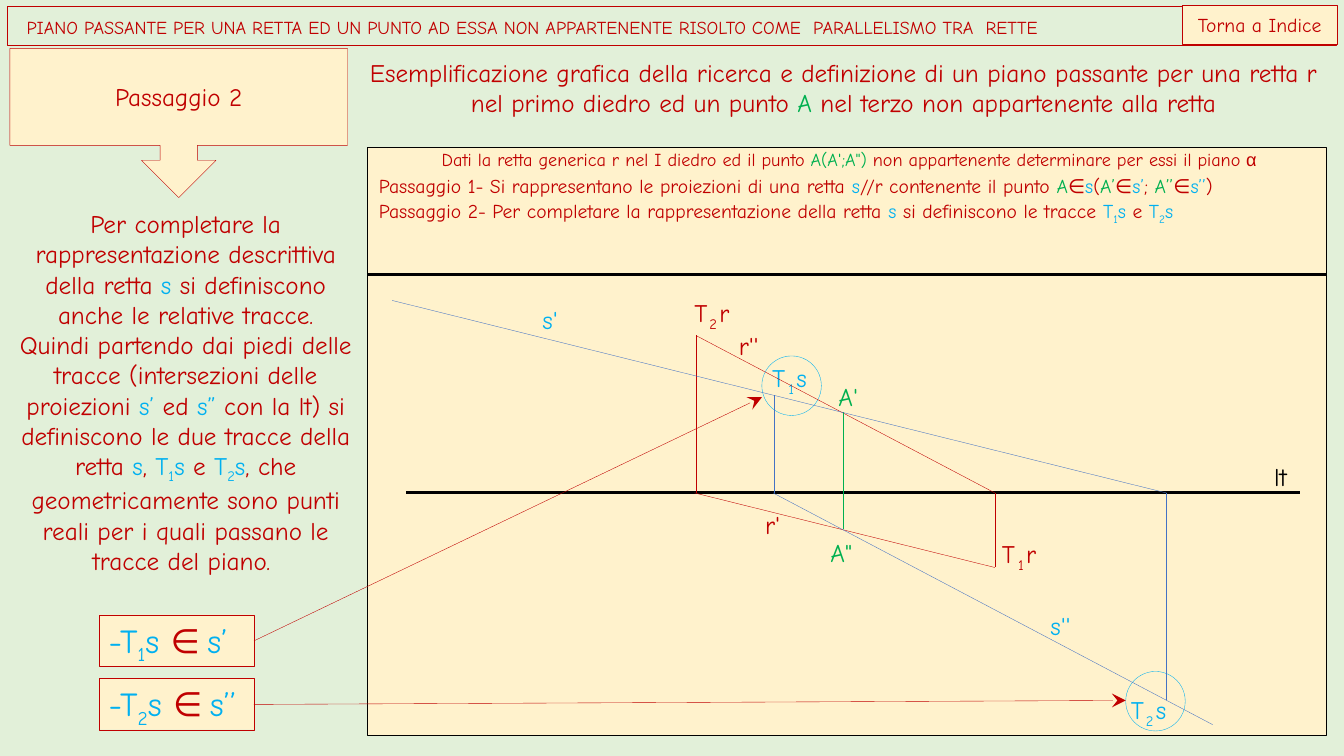
"""Build the slide on a plane through a line and a point outside it."""
from dataclasses import dataclass

from lxml import etree
from pptx import Presentation
from pptx import util as u
from pptx.dml.color import RGBColor
from pptx.enum import shapes, text
from pptx.oxml.ns import qn

HUES = {"red": "C00000", "green": "00B050", "sky": "00B0F0", "blue": "4472C4",
        "black": "000000", "cream": "FFF2CC", "mint": "E2F0D9"}
FONT = "Comic Neue"
STYLES = {"r": ("red", FONT), "g": ("green", FONT), "b": ("sky", FONT),
          "k": ("black", FONT), "c": ("red", "Calibri"), "a": ("red", "Arial")}
KIND = shapes.MSO_SHAPE
LEFT, MID = text.PP_ALIGN.LEFT, text.PP_ALIGN.CENTER
TOP, HALF = text.MSO_ANCHOR.TOP, text.MSO_ANCHOR.MIDDLE
GROUND = 12.42


@dataclass
class Box:
    """Hold a frame in centimetres."""
    x: float
    y: float
    w: float
    h: float

    def spans(self) -> list:
        """Return the frame as lengths."""
        return [u.Cm(v) for v in (self.x, self.y, self.w, self.h)]


@dataclass
class Line:
    """Hold a straight line with its colour and end."""
    x1: float
    y1: float
    x2: float
    y2: float
    hue: str
    width: float = 0.25
    arrow: bool = False


@dataclass
class Mark:
    """Hold a short label of the drawing."""
    x: float
    y: float
    w: float
    words: str
    h: float = 0.76


@dataclass
class Trace:
    """Hold a trace label made of letter, index and line name."""
    x: float
    y: float
    digit: str
    name: str
    style: str


def tint(hue: str) -> RGBColor:
    """Return the named colour."""
    return RGBColor.from_string(HUES[hue])


def write(shape, words: str, size: float = 18, align=MID, anchor=TOP,
          inset: bool = True, wrap: bool = True, fit: bool = True) -> None:
    """Fill a shape with pieces split by bars, each led by a style letter or _ for an index."""
    frame = shape.text_frame
    frame.word_wrap, frame.vertical_anchor = wrap, anchor
    modes = text.MSO_AUTO_SIZE
    frame.auto_size = modes.SHAPE_TO_FIT_TEXT if fit else modes.NONE
    if not inset:
        frame.margin_left = frame.margin_right = 0
        frame.margin_top = frame.margin_bottom = 0
    para = frame.paragraphs[0]
    para.alignment = align
    hue, face = STYLES["r"]
    for piece in words.split("|"):
        run = para.add_run()
        run.text = piece[1:]
        if piece[0] == "_":
            run._r.get_or_add_rPr().set("baseline", "-25000")
        else:
            hue, face = STYLES[piece[0]]
        run.font.name, run.font.size = face, u.Pt(size)
        run.font.color.rgb = tint(hue)


def edge(shape, hue: str, width: float = 0.25) -> None:
    """Give a shape its outline."""
    shape.line.color.rgb = tint(hue)
    shape.line.width = u.Pt(width)


def block(slide, kind, box: Box, fill: str = "cream", hue: str = "red", width: float = 0.25):
    """Add an outlined shape, hollow when fill is empty."""
    shape = slide.shapes.add_shape(kind, *box.spans())
    shape.shadow.inherit = False
    if fill:
        shape.fill.solid()
        shape.fill.fore_color.rgb = tint(fill)
    else:
        shape.fill.background()
    edge(shape, hue, width)
    return shape


def note(slide, box: Box, words: str, **form) -> None:
    """Add a text box."""
    write(slide.shapes.add_textbox(*box.spans()), words, **form)


def draw(slide, line: Line) -> None:
    """Add a straight line or arrow."""
    ends = [u.Cm(v) for v in (line.x1, line.y1, line.x2, line.y2)]
    link = slide.shapes.add_connector(shapes.MSO_CONNECTOR.STRAIGHT, *ends)
    edge(link, line.hue, line.width)
    if line.arrow:
        etree.SubElement(link.line._get_or_add_ln(), qn("a:tailEnd"),
                         type="stealth", w="lg", len="lg")
    etree.SubElement(link._element.spPr, qn("a:effectLst"))


def label(slide, mark: Mark) -> None:
    """Add a label without margins."""
    note(slide, Box(mark.x, mark.y, mark.w, mark.h), mark.words,
         align=LEFT, inset=False, wrap=False)


def trace(slide, item: Trace) -> None:
    """Add the three parts of a trace label."""
    step, wide = (0.41, 0.2) if item.digit == "1" else (0.38, 0.25)
    after = item.x + step + wide
    label(slide, Mark(item.x, item.y, 0.43, item.style + "T"))
    label(slide, Mark(item.x + step, item.y + 0.02, wide,
                      f"{item.style}|_{item.digit}", 0.51))
    label(slide, Mark(after, item.y, 0.3, item.style + item.name))


LINES = [
    Line(9.27, 6.91, 33.43, 6.91, "black", 0),
    Line(10.24, GROUND, 32.77, GROUND, "black", 0),
    Line(17.55, 8.46, 25.07, GROUND, "red"),
    Line(17.5, GROUND, 25.07, 14.3, "red"),
    Line(25.07, GROUND, 25.07, 14.3, "red"),
    Line(17.55, GROUND, 17.55, 8.43, "red"),
    Line(21.26, 10.39, 21.26, 13.34, "green"),
    Line(19.48, GROUND, 30.56, 18.26, "blue"),
    Line(9.88, 7.57, 29.39, GROUND, "blue"),
    Line(29.39, GROUND, 29.39, 17.65, "blue"),
    Line(19.51, GROUND, 19.51, 9.96, "blue"),
    Line(6.4, 16.15, 19.2, 10.01, "red", arrow=True),
    Line(6.4, 17.75, 28.37, 17.65, "red", arrow=True),
]
MARKS = [
    Mark(32.11, 11.63, 0.74, "klt", 1.07),
    Mark(21.13, 9.6, 0.71, "gA'"),
    Mark(20.93, 13.54, 0.74, 'gA"'),
    Mark(19.28, 12.83, 0.56, "rr'"),
    Mark(18.62, 8.33, 0.81, "rr''"),
    Mark(13.67, 7.67, 0.56, "bs'"),
    Mark(26.47, 15.39, 0.81, "bs''"),
]
TRACES = [
    Trace(25.25, 13.57, "1", "r", "r"),
    Trace(17.5, 7.48, "2", "r", "r"),
    Trace(19.46, 9.13, "1", "s", "b"),
    Trace(28.5, 17.5, "2", "s", "b"),
]
STEPS = [
    (4.27, "rPassaggio 1- Si rappresentano le proiezioni di una retta|b s|r//r contenente il punto "
           "|gA|r∈|bs|r(|gA’|r∈|bs’|r; |gA’’|r∈|bs’’|r)"),
    (4.9, "rPassaggio 2- Per completare la rappresentazione della retta |bs"
          "|r si definiscono le tracce |bT|_1|bs|r e |bT|_2|bs"),
]
FACTS = [(15.49, "b-T|_1|bs |c∈ |bs’"), (17.09, "b-T|_2|bs |c∈ |bs’’")]
STORY = ("rPer completare la rappresentazione descrittiva della retta |bs"
         "|r si definiscono anche le relative tracce. Quindi partendo dai piedi delle tracce "
         "(intersezioni delle proiezioni |bs’ |red |bs” |rcon la lt) si definiscono le due tracce "
         "della retta |bs|r, |bT|_1|bs|r e |bT|_2|bs|r, che geometricamente sono punti reali "
         "per i quali passano le tracce del piano. ")


def head(slide) -> None:
    """Format the title bar, the index tab and the heading."""
    bar = slide.shapes.title
    bar.left, bar.top, bar.width, bar.height = Box(0.18, 0.15, 33.5, 0.99).spans()
    edge(bar, "red")
    write(bar, "r |rPIANO PASSANTE PER UNA RETTA ED UN PUNTO AD ESSA NON APPARTENENTE "
          "RISOLTO COME  PARALLELISMO TRA  RETTE", size=13, align=LEFT, anchor=HALF, fit=False)
    para = bar.text_frame.paragraphs[0]
    para.line_spacing, para.space_before = 0.9, u.Pt(0)
    para.runs[0].font.size = u.Pt(20)
    tab = block(slide, KIND.RECTANGLE, Box(29.79, 0.13, 3.91, 0.99))
    write(tab, "rTorna a Indice", size=14, anchor=HALF)
    note(slide, Box(8.76, 1.32, 24.99, 1.8),
         "rEsemplificazione grafica della ricerca e definizione di un piano passante per una "
         "retta r nel primo diedro ed un punto |gA |rnel terzo non appartenente alla retta")


def side(slide) -> None:
    """Draw the left column."""
    call = block(slide, KIND.DOWN_ARROW_CALLOUT, Box(0.25, 1.22, 8.51, 3.76))
    write(call, "rPassaggio 2", anchor=HALF, fit=False)
    note(slide, Box(0.25, 5.13, 8.86, 10.26), STORY)
    for y, words in FACTS:
        fact = block(slide, KIND.RECTANGLE, Box(2.49, y, 3.91, 1.3))
        write(fact, words, size=24, align=LEFT)


def board(slide) -> None:
    """Draw the panel with its steps and figure."""
    block(slide, KIND.RECTANGLE, Box(9.27, 3.71, 24.16, 14.83), hue="black", width=0)
    note(slide, Box(9.32, 3.73, 24.16, 0.56),
         "rDati la retta generica r nel I diedro ed il punto |gA(A';A\") "
         "|rnon appartenente determinare per essi il piano |aα", size=13, inset=False)
    for y, words in STEPS:
        note(slide, Box(9.3, y, 24.18, 0.86), words, size=14, align=LEFT)
    for mark in MARKS:
        label(slide, mark)
    for item in TRACES:
        trace(slide, item)
    for x, y in ((28.37, 16.92), (19.2, 8.97)):
        block(slide, KIND.OVAL, Box(x, y, 1.5, 1.5), fill="", hue="sky")
    for line in LINES:
        draw(slide, line)


def main() -> None:
    """Build and save the deck."""
    deck = Presentation()
    deck.slide_width, deck.slide_height = u.Cm(33.87), u.Cm(19.05)
    slide = deck.slides.add_slide(deck.slide_layouts[5])
    slide.background.fill.solid()
    slide.background.fill.fore_color.rgb = tint("mint")
    for part in (head, side, board):
        part(slide)
    deck.save("out.pptx")


if __name__ == "__main__":
    main()
